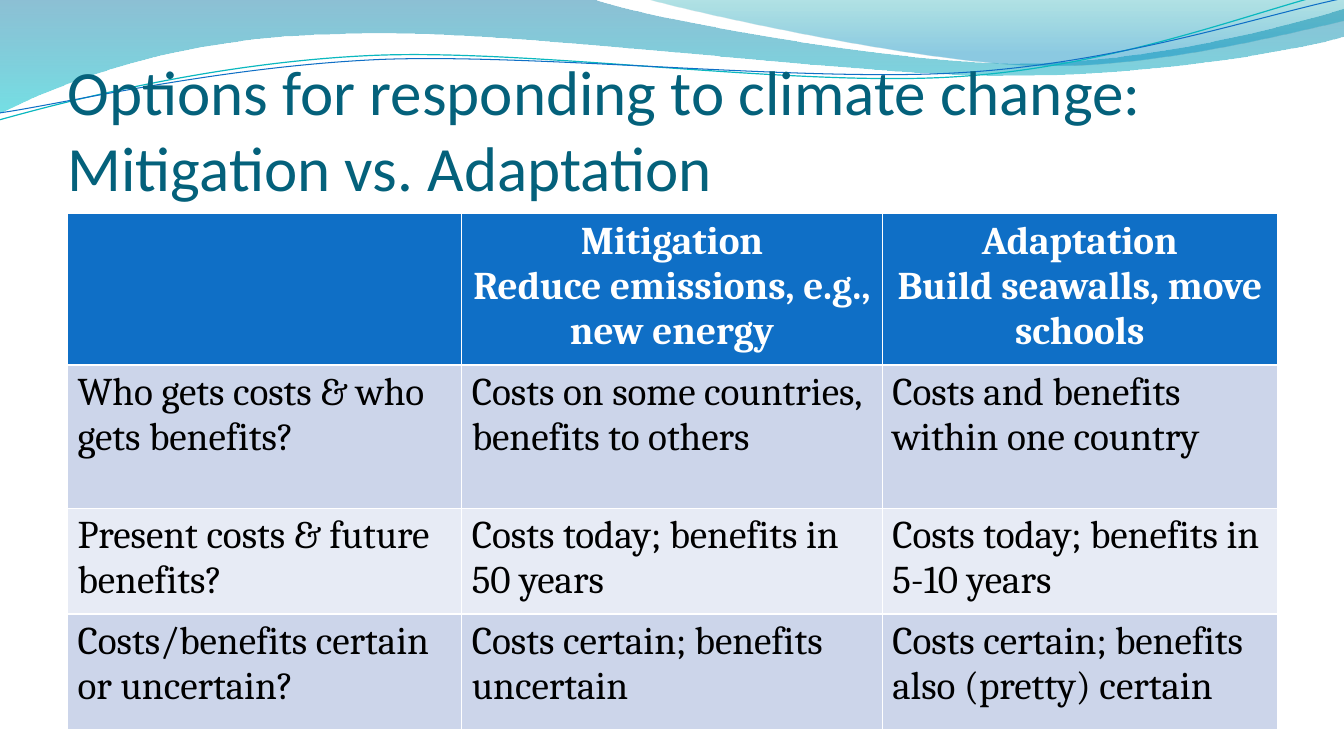
from lxml import etree
from pptx import Presentation
from pptx import util as u
from pptx.dml.color import RGBColor
from pptx.enum import text
from pptx.oxml import ns

CELL = u.Inches(1)
GRID_COLUMNS, GRID_ROWS = 13.33, 7.5

WHITE = RGBColor(0xFF, 0xFF, 0xFF)
BLACK = RGBColor(0x00, 0x00, 0x00)
BLUE = RGBColor(0x0F, 0x6F, 0xC6)
TEAL = RGBColor(0x0A, 0xB8, 0xBF)
TITLE_TEAL = RGBColor(0x04, 0x61, 0x7B)
WAVE_BLUE = RGBColor(0x00, 0x74, 0xA1)
WAVE_CYAN = RGBColor(0x00, 0xC6, 0xCF)
CREST_TEAL = RGBColor(0x00, 0xA1, 0xA9)
CREST_BLUE = RGBColor(0x00, 0x8B, 0xBF)
BAND_DARK = RGBColor(0xCC, 0xD5, 0xEA)
BAND_LIGHT = RGBColor(0xE7, 0xEB, 0xF5)

WAVE = [
    (0, 0), (5.87, -0.01),
    (6.34, 0.17, 8.85, 0.63, 10.11, 0.63),
    (11.38, 0.63, 12.78, 0.26, 13.33, 0.09),
    (13.35, 0.36),
    (13.11, 0.44, 11.6, 0.76, 9.94, 0.75),
    (8.29, 0.75, 5.09, 0.28, 3.43, 0.34),
    (1.72, 0.36, 0.61, 0.83, -0.01, 1.13),
]
CREST = [
    (6.39, -0.01),
    (6.79, 0.11, 9.09, 0.62, 10.25, 0.65),
    (11.41, 0.69, 12.82, 0.32, 13.33, 0.21),
    (13.33, 0),
]
TEAL_STRAND = [
    (-0.01, 1.19),
    (0.64, 1.01, 2.11, 0.62, 3.69, 0.55),
    (5.27, 0.48, 7.9, 0.87, 9.5, 0.76),
    (11.1, 0.66, 12.52, 0.08, 13.31, -0.1),
]
BLUE_STRAND = [
    (0, 1.12),
    (0.63, 1.03, 2.18, 0.66, 3.78, 0.59),
    (5.37, 0.53, 7.96, 0.82, 9.55, 0.72),
    (11.15, 0.62, 12.55, 0.14, 13.34, -0.02),
]

TITLE = "Options for responding to climate change: \nMitigation vs. Adaptation"
COLUMN_WIDTHS = [3.91, 4.17, 3.92]
ROW_HEIGHTS = [1.42, 1.42, 1.05, 1.15]
ROWS = [
    [[],
     ["Mitigation", "Reduce emissions, e.g., new energy"],
     ["Adaptation", "Build seawalls, move schools"]],
    [["Who gets costs & who gets benefits?"],
     ["Costs on some countries, benefits to others"],
     ["Costs and benefits within one country"]],
    [["Present costs & future benefits?"],
     ["Costs today; benefits in \n50 years"],
     ["Costs today; benefits in 5-10 years"]],
    [["Costs/benefits certain or uncertain?"],
     ["Costs certain; benefits uncertain"],
     ["Costs certain; benefits also (pretty) certain"]],
]


def cells(*lengths):
    return [u.Emu(round(length * CELL)) for length in lengths]


def add_runs(paragraph, wording, font_name, size, color, bold=False):
    for index, line in enumerate(wording.split("\n")):
        if index:
            paragraph.add_line_break()
        run = paragraph.add_run()
        run.text = line
        run.font.name = font_name
        run.font.size = u.Pt(size)
        run.font.color.rgb = color
        run.font.bold = bold


def bend_sides(shape, box, segments):
    sides = list(shape._element.iter(ns.qn("a:lnTo")))
    for side, segment in zip(sides, segments[1:]):
        if len(segment) == 2:
            continue
        curve = etree.Element(ns.qn("a:cubicBezTo"))
        for x, y in zip(segment[::2], segment[1::2]):
            left, top = cells(box[0] + x, box[1] + y)
            etree.SubElement(curve, ns.qn("a:pt"),
                             x=str(left - shape.left), y=str(top - shape.top))
        side.getparent().replace(side, curve)


def add_outline(slide, box, segments, close):
    anchors = [cells(box[0] + segment[-2], box[1] + segment[-1]) for segment in segments]
    builder = slide.shapes.build_freeform(*anchors[0])
    builder.add_line_segments(anchors[1:], close=close)
    shape = builder.convert_to_shape()
    shape.shadow.inherit = False
    bend_sides(shape, box, segments)
    return shape


def add_wave(slide, box, segments, stops):
    shape = add_outline(slide, box, segments, True)
    shape.line.fill.background()
    shape.fill.gradient()
    shape.fill.gradient_angle = 270
    for stop, (position, color, _) in zip(shape.fill.gradient_stops, stops):
        stop.position = position
        stop.color.rgb = color
    colors = shape._element.spPr.iter(ns.qn("a:srgbClr"))
    for element, (_, _, opacity) in zip(colors, stops):
        etree.SubElement(element, ns.qn("a:alpha"), val=str(opacity * 1000))


def add_strand(slide, box, segments, color, width):
    shape = add_outline(slide, box, segments, False)
    shape.fill.background()
    shape.line.color.rgb = color
    shape.line.width = u.Pt(width)


def add_banner(slide, box):
    add_wave(slide, box, WAVE, [(0, WAVE_BLUE, 45), (1, WAVE_CYAN, 55)])
    add_wave(slide, box, CREST, [(0, CREST_TEAL, 30), (0.8, CREST_BLUE, 45)])
    add_strand(slide, box, TEAL_STRAND, TEAL, 0.85)
    add_strand(slide, box, BLUE_STRAND, BLUE, 0.75)


def add_title(slide, box):
    frame = slide.shapes.add_textbox(*cells(*box)).text_frame
    frame.word_wrap = True
    frame.vertical_anchor = text.MSO_ANCHOR.BOTTOM
    frame.margin_left = frame.margin_right = frame.margin_bottom = 0
    frame.margin_top = u.Inches(0.05)
    add_runs(frame.paragraphs[0], TITLE, "Calibri", 45, TITLE_TEAL)


def fill_cell(cell, wording, row_index):
    header = row_index == 0
    cell.fill.solid()
    cell.fill.fore_color.rgb = (
        BLUE if header else BAND_DARK if row_index % 2 else BAND_LIGHT)
    frame = cell.text_frame
    for index, line in enumerate(wording):
        paragraph = frame.add_paragraph() if index else frame.paragraphs[0]
        paragraph.alignment = text.PP_ALIGN.CENTER if header else text.PP_ALIGN.LEFT
        add_runs(paragraph, line, "Cambria", 28, WHITE if header else BLACK, header)


def add_comparison(slide, box):
    table = slide.shapes.add_table(len(ROWS), len(COLUMN_WIDTHS), *cells(*box)).table
    for column, width in zip(table.columns, cells(*COLUMN_WIDTHS)):
        column.width = width
    for row, height in zip(table.rows, cells(*ROW_HEIGHTS)):
        row.height = height
    for row_index, row in enumerate(ROWS):
        for column_index, wording in enumerate(row):
            fill_cell(table.cell(row_index, column_index), wording, row_index)


def main():
    presentation = Presentation()
    presentation.slide_width, presentation.slide_height = cells(GRID_COLUMNS, GRID_ROWS)
    slide = presentation.slides.add_slide(presentation.slide_layouts[6])
    slide.background.fill.solid()
    slide.background.fill.fore_color.rgb = WHITE
    add_banner(slide, (0, 0))
    add_title(slide, (0.67, 0.77, 12, 1.25))
    add_comparison(slide, (0.67, 2.12, 12, sum(ROW_HEIGHTS)))
    presentation.save("out.pptx")


if __name__ == "__main__":
    main()
